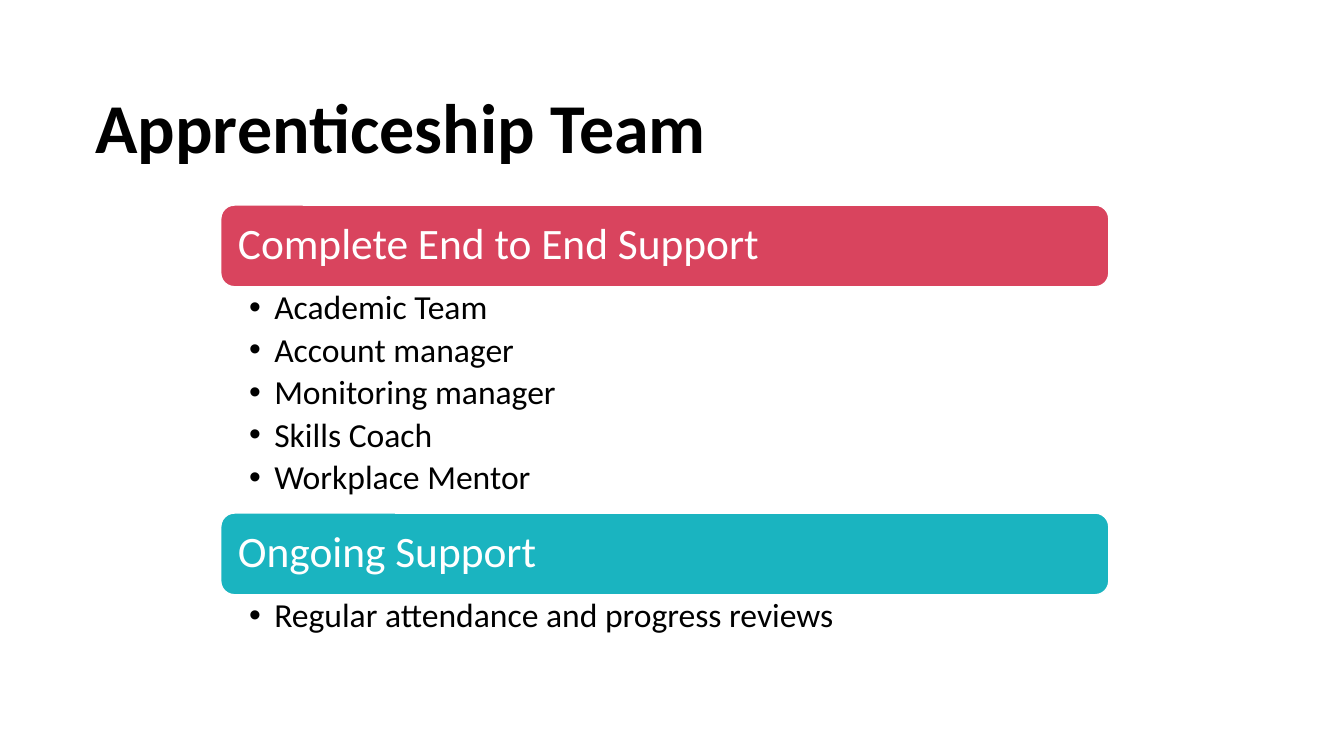
from lxml import etree
from pptx import Presentation
from pptx.dml.color import RGBColor
from pptx.enum import shapes, text
from pptx.oxml.ns import qn
from pptx.util import Pt

FONT = "Calibri"
LEFT, WIDTH = 157.7, 634.3
BAR = 58.3
SECTIONS = [
    (146.5, 162, "D9445E", "Complete End to End Support",
     ["Academic Team", "Account manager", "Monitoring manager",
      "Skills Coach", "Workplace Mentor"]),
    (366.5, 59, "1AB4C0", "Ongoing Support",
     ["Regular attendance and progress reviews"]),
]


def color(code):
    return RGBColor.from_string(code)


def set_frame(frame, insets, anchor):
    frame.word_wrap = True
    frame.vertical_anchor = anchor
    (frame.margin_left, frame.margin_top,
     frame.margin_right, frame.margin_bottom) = map(Pt, insets)


def add_run(para, words, size, code, bold=False):
    para.alignment = text.PP_ALIGN.LEFT
    para.line_spacing = 0.9
    run = para.add_run()
    run.text = words
    font = run.font
    font.name, font.size, font.bold = FONT, Pt(size), bold
    font.color.rgb = color(code)


def add_title(slide, left, top, width, height, words):
    box = slide.shapes.add_textbox(Pt(left), Pt(top), Pt(width), Pt(height))
    set_frame(box.text_frame, (7.2, 3.6, 7.2, 3.6), text.MSO_ANCHOR.TOP)
    add_run(box.text_frame.paragraphs[0], words, 50, "000000", True)


def add_bar(slide, left, top, width, height, fill, words):
    bar = slide.shapes.add_shape(shapes.MSO_SHAPE.ROUNDED_RECTANGLE,
                                 Pt(left), Pt(top), Pt(width), Pt(height))
    bar.shadow.inherit = False
    bar.fill.solid()
    bar.fill.fore_color.rgb = color(fill)
    bar.line.color.rgb = color("FFFFFF")
    bar.line.width = Pt(1)
    # The preset adds its own corner inset to the left and right margins
    set_frame(bar.text_frame, (9.4, 9.4, 9.4, 9.4), text.MSO_ANCHOR.MIDDLE)
    add_run(bar.text_frame.paragraphs[0], words, 31, "FFFFFF")


def add_list(slide, left, top, width, height, items):
    box = slide.shapes.add_textbox(Pt(left), Pt(top), Pt(width), Pt(height))
    frame = box.text_frame
    set_frame(frame, (20.2, 2.9, 17.3, 2.9), text.MSO_ANCHOR.TOP)
    for i, item in enumerate(items):
        para = frame.add_paragraph() if i else frame.paragraphs[0]
        props = para._p.get_or_add_pPr()
        props.set("marL", str(Pt(18)))
        props.set("indent", str(-Pt(18)))
        etree.SubElement(props, qn("a:buFont")).set("typeface", "Arial")
        etree.SubElement(props, qn("a:buChar")).set("char", "•")
        para.space_after = Pt(4.4)
        add_run(para, item, 24, "000000")


def add_section(slide, left, top, width, depth, fill, head, items):
    """A coloured heading bar with a bulleted list of the given depth below."""
    add_bar(slide, left, top, width, BAR, fill, head)
    add_list(slide, left, top + BAR, width, depth, items)


def main():
    deck = Presentation()
    deck.slide_width, deck.slide_height = Pt(960), Pt(540)
    slide = deck.slides.add_slide(deck.slide_layouts[6])
    add_title(slide, 61.2, 62.6, 828, 78.5, "Apprenticeship Team")
    for top, depth, fill, head, items in SECTIONS:
        add_section(slide, LEFT, top, WIDTH, depth, fill, head, items)
    deck.save("out.pptx")


if __name__ == "__main__":
    main()
